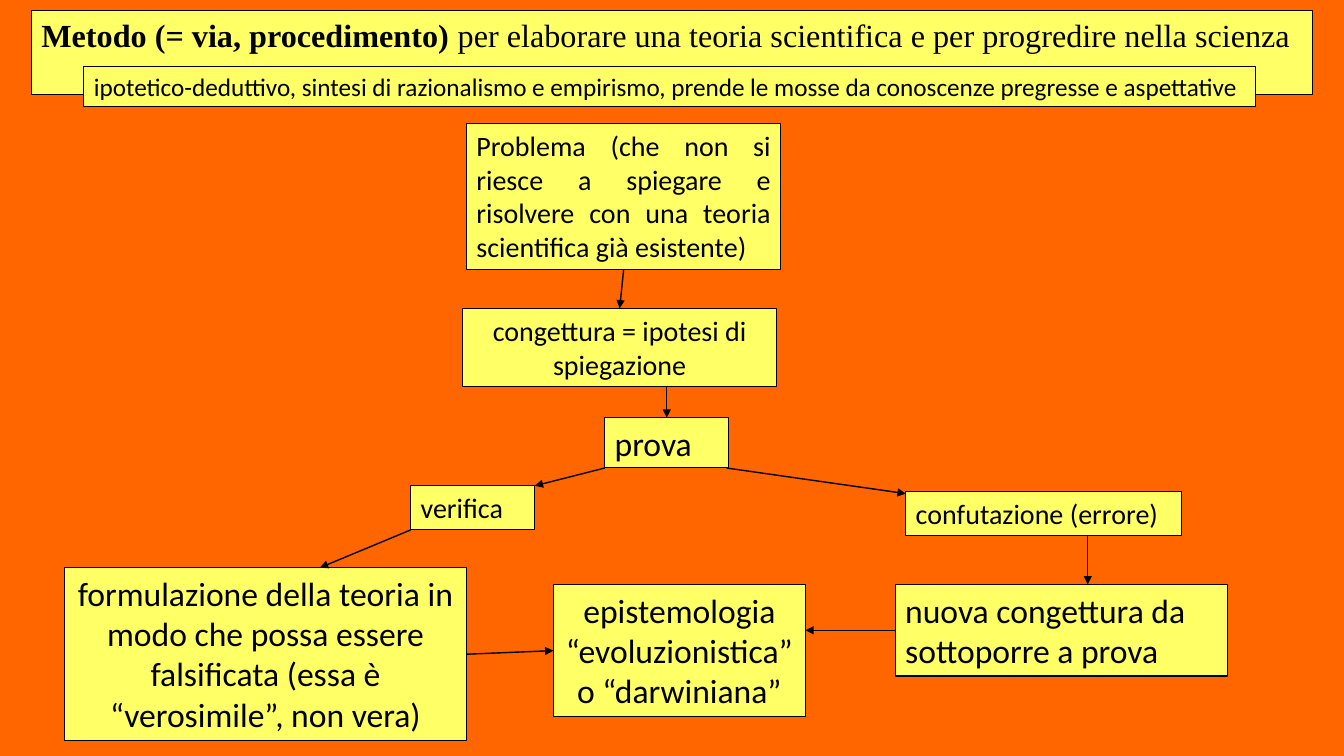
"""Build a slide with a flow diagram of the scientific method."""
import pptx
import pptx.dml.color
import pptx.enum.shapes
import pptx.enum.text
import pptx.oxml
import pptx.oxml.ns
import pptx.util

Pt = pptx.util.Pt
ORANGE = pptx.dml.color.RGBColor(0xFF, 0x66, 0x00)
YELLOW = pptx.dml.color.RGBColor(0xFF, 0xFF, 0x66)
BLACK = pptx.dml.color.RGBColor(0x00, 0x00, 0x00)
LEFT = pptx.enum.text.PP_ALIGN.LEFT
CENTER = pptx.enum.text.PP_ALIGN.CENTER
JUSTIFY = pptx.enum.text.PP_ALIGN.JUSTIFY


def write(text, sp, size=20, font="Calibri", bold=False, align=LEFT):
    p = sp.text_frame.paragraphs[0]
    p.alignment = align
    r = p.add_run()
    r.text = text
    r.font.size = Pt(size)
    r.font.name = font
    r.font.bold = bold
    r.font.color.rgb = BLACK


def style_box(sp):
    sp.fill.solid()
    sp.fill.fore_color.rgb = YELLOW
    sp.line.color.rgb = BLACK
    sp.line.width = Pt(0.75)
    tf = sp.text_frame
    tf.word_wrap = True
    tf.auto_size = pptx.enum.text.MSO_AUTO_SIZE.SHAPE_TO_FIT_TEXT
    tf.vertical_anchor = pptx.enum.text.MSO_ANCHOR.TOP


prs = pptx.Presentation()
prs.slide_width, prs.slide_height = Pt(960), Pt(540)
s = prs.slides.add_slide(prs.slide_layouts[5])
s.background.fill.solid()
s.background.fill.fore_color.rgb = ORANGE

title = s.shapes.title
title.left, title.top, title.width, title.height = Pt(22.3), Pt(7.2), Pt(915), Pt(36)
style_box(title)
write("Metodo (= via, procedimento) ", title, size=23, font="Times New Roman", bold=True)
write("per elaborare una teoria scientifica e per progredire nella scienza", title,
      size=23, font="Times New Roman")

boxes = {
    "metodo": ("ipotetico-deduttivo, sintesi di razionalismo e empirismo, prende le mosse "
               "da conoscenze pregresse e aspettative", 60, 47.3, 836.5, 29, 18, LEFT),
    "problema": ("Problema (che non si riesce a spiegare e risolvere con una teoria "
                 "scientifica già esistente)", 333.2, 88.4, 224.5, 104.3, 20, JUSTIFY),
    "congettura": ("congettura = ipotesi di spiegazione", 330.4, 220.3, 224.5, 55.7, 20, CENTER),
    "prova": ("prova", 432, 298.3, 88.6, 36, 24, LEFT),
    "verifica": ("verifica", 293.4, 347, 88.6, 31.5, 20, LEFT),
    "formulazione": ("formulazione della teoria in modo che possa essere falsificata "
                     "(essa è “verosimile”, non vera)", 46, 405.5, 287.3, 123.6, 24, CENTER),
    "nuova": ("nuova congettura da sottoporre a prova", 639.5, 417.5, 237, 65.4, 24, LEFT),
    "confutazione": ("confutazione (errore)", 647, 351, 196.7, 31.5, 20, LEFT),
    "epistemologia": ("epistemologia “evoluzionistica” o “darwiniana”",
                      395.3, 417.5, 180, 94.5, 24, CENTER),
}
shapes = {}
for name, (text, x, y, w, h, size, align) in boxes.items():
    sp = s.shapes.add_textbox(Pt(x), Pt(y), Pt(w), Pt(h))
    style_box(sp)
    write(text, sp, size=size, align=align)
    shapes[name] = sp

arrows = [
    (445.5, 192.7, 442.6, 220.3, ("problema", 2), ("congettura", 0)),
    (476.3, 276, 476.3, 298.3, None, ("prova", 0)),
    (432, 334.3, 382, 347, None, None),
    (519, 334.3, 647, 352.6, None, None),
    (293.4, 378.5, 228.5, 405.5, None, None),
    (777, 382.5, 777, 417.5, None, None),
    (333.3, 467.3, 395.3, 464.8, ("formulazione", 3), ("epistemologia", 1)),
    (639.5, 450.2, 575.3, 450.2, ("nuova", 1), None),
]
for x1, y1, x2, y2, begin, end in arrows:
    c = s.shapes.add_connector(pptx.enum.shapes.MSO_CONNECTOR.STRAIGHT,
                               Pt(x1), Pt(y1), Pt(x2), Pt(y2))
    if begin:
        c.begin_connect(shapes[begin[0]], begin[1])
    if end:
        c.end_connect(shapes[end[0]], end[1])
    c.line.color.rgb = BLACK
    c.line.width = Pt(1)
    ln = c.line._get_or_add_ln()
    ln.append(pptx.oxml.parse_xml(
        f'<a:tailEnd {pptx.oxml.ns.nsdecls("a")} type="triangle"/>'))
    c._element.spPr.append(pptx.oxml.parse_xml(
        f'<a:effectLst {pptx.oxml.ns.nsdecls("a")}/>'))

prs.save("out.pptx")
